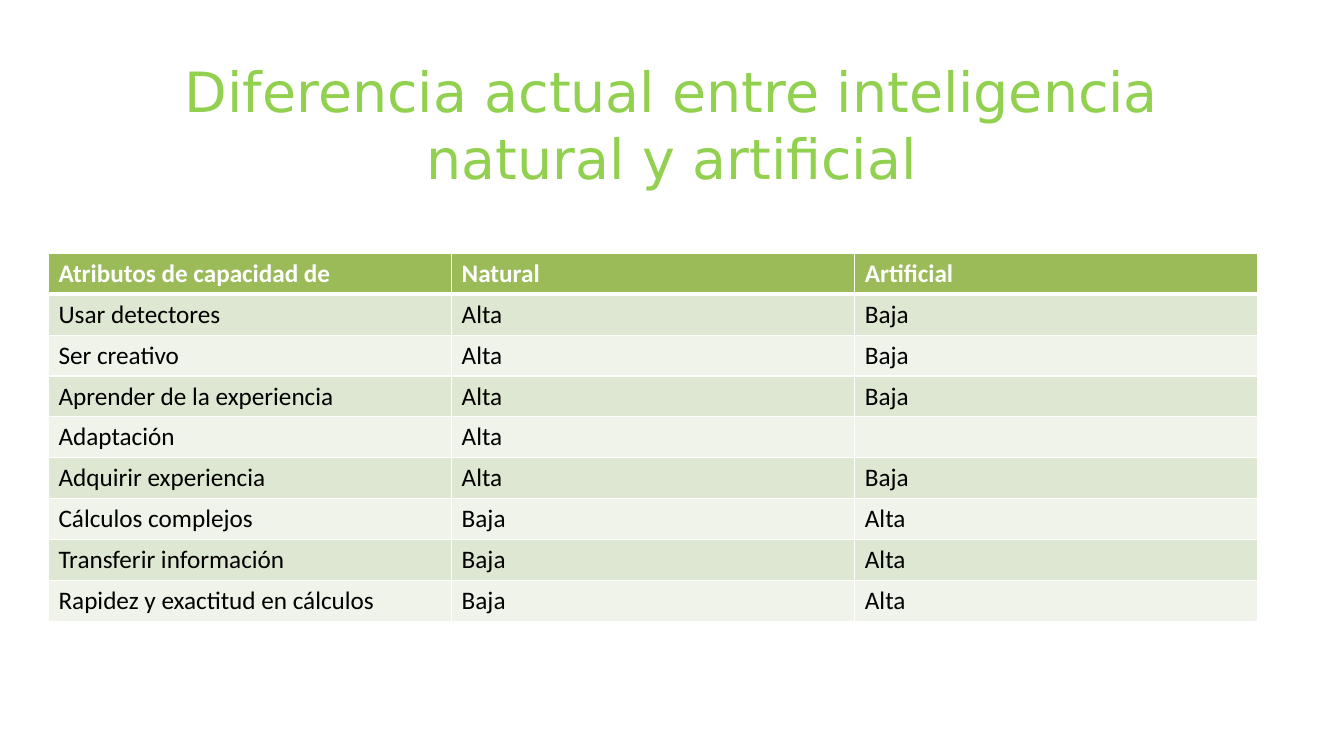
from lxml import etree
from pptx import Presentation
from pptx import util as u
from pptx.dml.color import RGBColor
from pptx.enum import text
from pptx.oxml import ns

LIME = RGBColor(0x92, 0xD0, 0x50)
OLIVE = RGBColor(0x9B, 0xBB, 0x59)
SAGE = RGBColor(0xDE, 0xE7, 0xD1)
MIST = RGBColor(0xEF, 0xF3, 0xEA)
WHITE = RGBColor(0xFF, 0xFF, 0xFF)
BLACK = RGBColor(0, 0, 0)

TITLE = "Diferencia actual entre inteligencia natural y artificial"
COMPARISON = [
    ("Atributos de capacidad de", "Natural", "Artificial"),
    ("Usar detectores", "Alta", "Baja"),
    ("Ser creativo", "Alta", "Baja"),
    ("Aprender de la experiencia", "Alta", "Baja"),
    ("Adaptación", "Alta", ""),
    ("Adquirir experiencia", "Alta", "Baja"),
    ("Cálculos complejos", "Baja", "Alta"),
    ("Transferir información", "Baja", "Alta"),
    ("Rapidez y exactitud en cálculos", "Baja", "Alta"),
]


def write(frame, wording, font="Calibri", size=18, color=BLACK, bold=False,
          align=text.PP_ALIGN.LEFT):
    paragraph = frame.paragraphs[0]
    paragraph.alignment = align
    paragraph.font.size = u.Pt(size)
    if not wording:
        return
    run = paragraph.add_run()
    run.text = wording
    run.font.name = font
    run.font.size = u.Pt(size)
    run.font.bold = bold
    run.font.color.rgb = color


def set_borders(cell, color, **widths):
    """Draw cell edges; keys are L, R, T and B, values are points."""
    properties = cell._tc.get_or_add_tcPr()
    for position, side in enumerate("LRTB"):
        edge = etree.Element(ns.qn(f"a:ln{side}"), w=str(u.Pt(widths[side])))
        fill = etree.SubElement(edge, ns.qn("a:solidFill"))
        etree.SubElement(fill, ns.qn("a:srgbClr"), val=str(color))
        properties.insert(position, edge)


class ComparisonSlide:
    def __init__(self, deck):
        self.slide = deck.slides.add_slide(deck.slide_layouts[6])
        self.header_fill = OLIVE
        self.band_fills = (MIST, SAGE)
        self.rule_color = WHITE

    def title(self, wording, left, top, width, height):
        heading = self.slide.shapes.add_textbox(
            u.Pt(left), u.Pt(top), u.Pt(width), u.Pt(height))
        frame = heading.text_frame
        frame.word_wrap = True
        frame.vertical_anchor = text.MSO_ANCHOR.MIDDLE
        write(frame, wording, font="DejaVu Sans", size=39.6, color=LIME,
              align=text.PP_ALIGN.CENTER)

    def table(self, rows, left, top, width, row_height):
        grid = self.slide.shapes.add_table(
            len(rows), len(rows[0]), u.Pt(left), u.Pt(top),
            u.Pt(width), u.Pt(row_height * len(rows))).table
        for row_index, row in enumerate(rows):
            grid.rows[row_index].height = u.Pt(row_height)
            header = row_index == 0
            for column, wording in enumerate(row):
                cell = grid.cell(row_index, column)
                cell.fill.solid()
                cell.fill.fore_color.rgb = (
                    self.header_fill if header else self.band_fills[row_index % 2])
                set_borders(cell, self.rule_color, L=1, R=1,
                            T=3 if row_index == 1 else 1, B=3 if header else 1)
                write(cell.text_frame, wording, bold=header,
                      color=WHITE if header else BLACK)


def main():
    deck = Presentation()
    deck.slide_width, deck.slide_height = u.Pt(960), u.Pt(540)
    page = ComparisonSlide(deck)
    page.title(TITLE, left=48, top=54, width=864, height=69)
    page.table(COMPARISON, left=34.6, top=181, width=864, row_height=29.2)
    deck.save("out.pptx")


if __name__ == "__main__":
    main()
